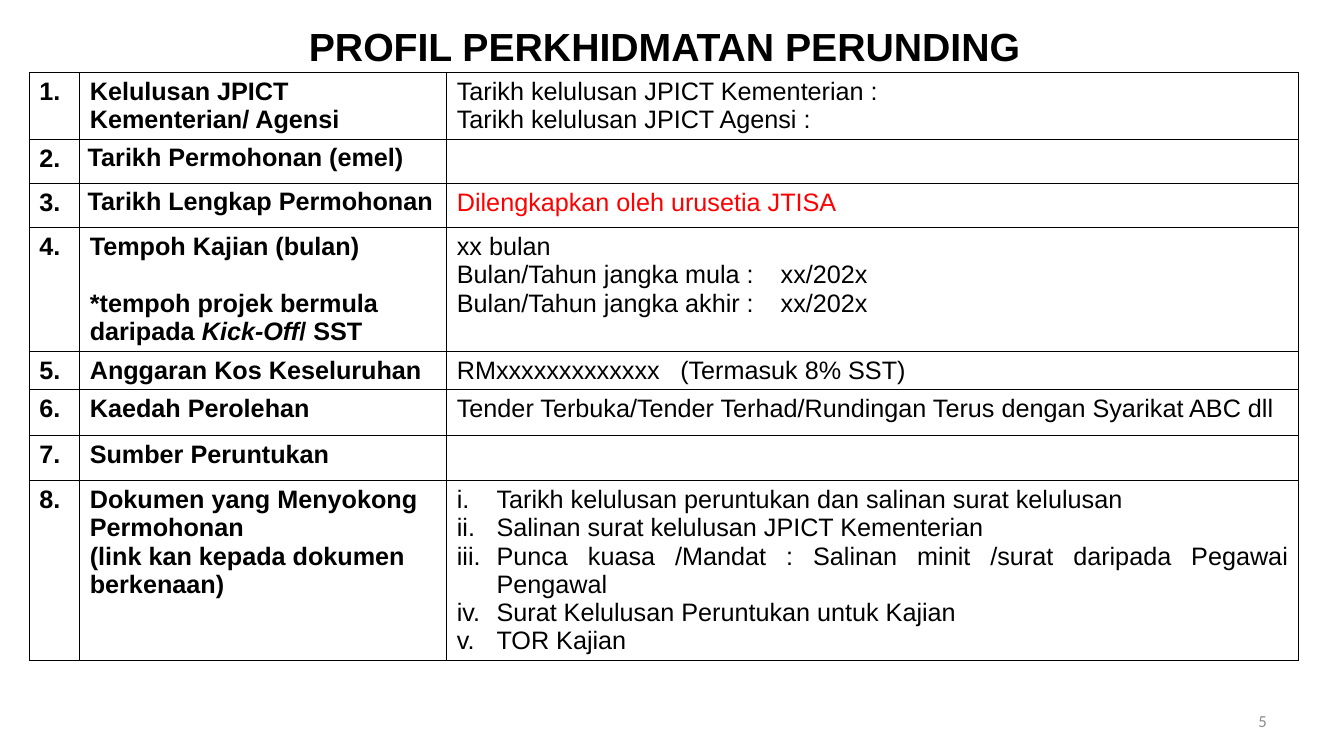
from pptx import Presentation
from pptx.util import Cm, Pt
from pptx.dml.color import RGBColor
from pptx.enum.text import PP_ALIGN, MSO_ANCHOR
from pptx.oxml.ns import qn
from lxml.etree import SubElement

BLACK, RED, GREY = "000000", "FF0000", "8C8C8C"
BODY = {"name": "Arial", "size": Pt(18), "bold": False}
BOLD = {**BODY, "bold": True}
HEAD = {**BOLD, "size": Pt(28)}
FOOT = {"name": "Calibri", "size": Pt(12), "bold": False}

# Each line is a list of runs; a run is plain text or (text, format)
ROWS = [
    (1.69, ["Kelulusan JPICT Kementerian/ Agensi"],
     ["Tarikh kelulusan JPICT Kementerian :", "Tarikh kelulusan JPICT Agensi :"]),
    (1.11, ["Tarikh Permohonan (emel)"], []),
    (1.11, ["Tarikh Lengkap Permohonan"], ["Dilengkapkan oleh urusetia JTISA"]),
    (3.1, ["Tempoh Kajian (bulan)",
           ["*tempoh projek bermula daripada ", ("Kick-Off", {"italic": True}), "/ SST"]],
     ["xx bulan", "Bulan/Tahun jangka mula :\txx/202x",
      "Bulan/Tahun jangka akhir :\txx/202x"]),
    (0.96, ["Anggaran Kos Keseluruhan"], ["RMxxxxxxxxxxxxx\t(Termasuk 8% SST)"]),
    (1.15, ["Kaedah Perolehan"],
     ["Tender Terbuka/Tender Terhad/Rundingan Terus dengan Syarikat ABC dll"]),
    (1.15, ["Sumber Peruntukan"], []),
    (4.5, ["Dokumen yang Menyokong Permohonan", "(link kan kepada dokumen berkenaan)"],
     ["Tarikh kelulusan peruntukan dan salinan surat kelulusan",
      "Salinan surat kelulusan JPICT Kementerian",
      "Punca kuasa /Mandat : Salinan minit /surat daripada Pegawai Pengawal",
      "Surat Kelulusan Peruntukan untuk Kajian", "TOR Kajian"]),
]
TIGHT = (1, 2)              # rows with smaller label margins
TABS = {3: 8.16, 4: 5.63}   # tab stop by row
JUST = (5, 7)               # justified rows
LIST = 7                    # numbered row


def color(code):
    return RGBColor.from_string(code)


def apply(obj, vals):
    for key, val in vals.items():
        setattr(obj, key, val)


def write(frame, lines, style, code=BLACK, align=PP_ALIGN.LEFT):
    frame.word_wrap = True
    for n, line in enumerate(lines):
        para = frame.paragraphs[0] if n == 0 else frame.add_paragraph()
        para.alignment = align
        for part in [line] if isinstance(line, str) else line:
            text, extra = (part, {}) if isinstance(part, str) else part
            run = para.add_run()
            run.text = text
            apply(run.font, {**style, **extra})
            run.font.color.rgb = color(code)


def add_text(slide, box, text, style, code, align, anchor):
    frame = slide.shapes.add_textbox(*map(Cm, box)).text_frame
    write(frame, [text], style, code, align)
    frame.vertical_anchor = anchor
    return frame.paragraphs[0]


def add_edges(cell):
    props = cell._tc.get_or_add_tcPr()
    for n, side in enumerate(("lnL", "lnR", "lnT", "lnB")):
        line = props.makeelement(qn("a:" + side), {"w": str(Pt(1))})
        fill = SubElement(line, qn("a:solidFill"))
        SubElement(fill, qn("a:srgbClr"), val=BLACK)
        props.insert(n, line)


def add_tab(para, stop):
    tabs = SubElement(para._p.get_or_add_pPr(), qn("a:tabLst"))
    SubElement(tabs, qn("a:tab"), pos=str(Cm(stop)), algn="l")


def add_roman(para):
    props = para._p.get_or_add_pPr()
    apply_ind = {"marL": str(Cm(1)), "indent": str(-Cm(1))}
    for key, val in apply_ind.items():
        props.set(key, val)
    SubElement(props, qn("a:buAutoNum"), type="romanLcPeriod")


def add_grid(slide, box):
    left, top, width = box
    high = sum(row[0] for row in ROWS)
    grid = slide.shapes.add_table(len(ROWS), 3, *map(Cm, (left, top, width, high))).table
    apply(grid, {"first_row": False, "horz_banding": False})
    cols = (1.27, 9.25)
    for col, wide in zip(grid.columns, (*cols, width - sum(cols))):
        col.width = Cm(wide)

    for n, (tall, label, value) in enumerate(ROWS):
        grid.rows[n].height = Cm(tall)
        cells = grid.rows[n].cells
        for cell in cells:
            cell.fill.background()
            add_edges(cell)
        write(cells[0].text_frame, [f"{n + 1}."], BOLD)
        write(cells[1].text_frame, label, BOLD)
        write(cells[2].text_frame, value, BODY, RED if n == 2 else BLACK,
              PP_ALIGN.JUSTIFY if n in JUST else PP_ALIGN.LEFT)
        if n in TIGHT:
            apply(cells[1], {"margin_left": Cm(0.2), "margin_right": Cm(0.2),
                             "margin_top": Cm(0.1), "margin_bottom": Cm(0.1)})
        for para in cells[2].text_frame.paragraphs:
            if n in TABS:
                add_tab(para, TABS[n])
            if n == LIST:
                add_roman(para)

    # Gap above the note on the study period
    grid.cell(3, 1).text_frame.paragraphs[1].space_before = Pt(20.5)


def main():
    deck = Presentation()
    apply(deck, {"slide_width": Cm(33.87), "slide_height": Cm(19.05)})
    slide = deck.slides.add_slide(deck.slide_layouts[6])
    # Table, title and page number
    add_grid(slide, (0.74, 1.83, 31.98))
    title = add_text(slide, (2.9, 0.43, 27.69, 1.4), "PROFIL PERKHIDMATAN PERUNDING",
                     HEAD, BLACK, PP_ALIGN.CENTER, MSO_ANCHOR.TOP)
    title.space_before = Pt(3)
    add_text(slide, (24.28, 17.65, 7.9, 1.02), "5", FOOT, GREY,
             PP_ALIGN.RIGHT, MSO_ANCHOR.MIDDLE)
    deck.save("out.pptx")


if __name__ == "__main__":
    main()
